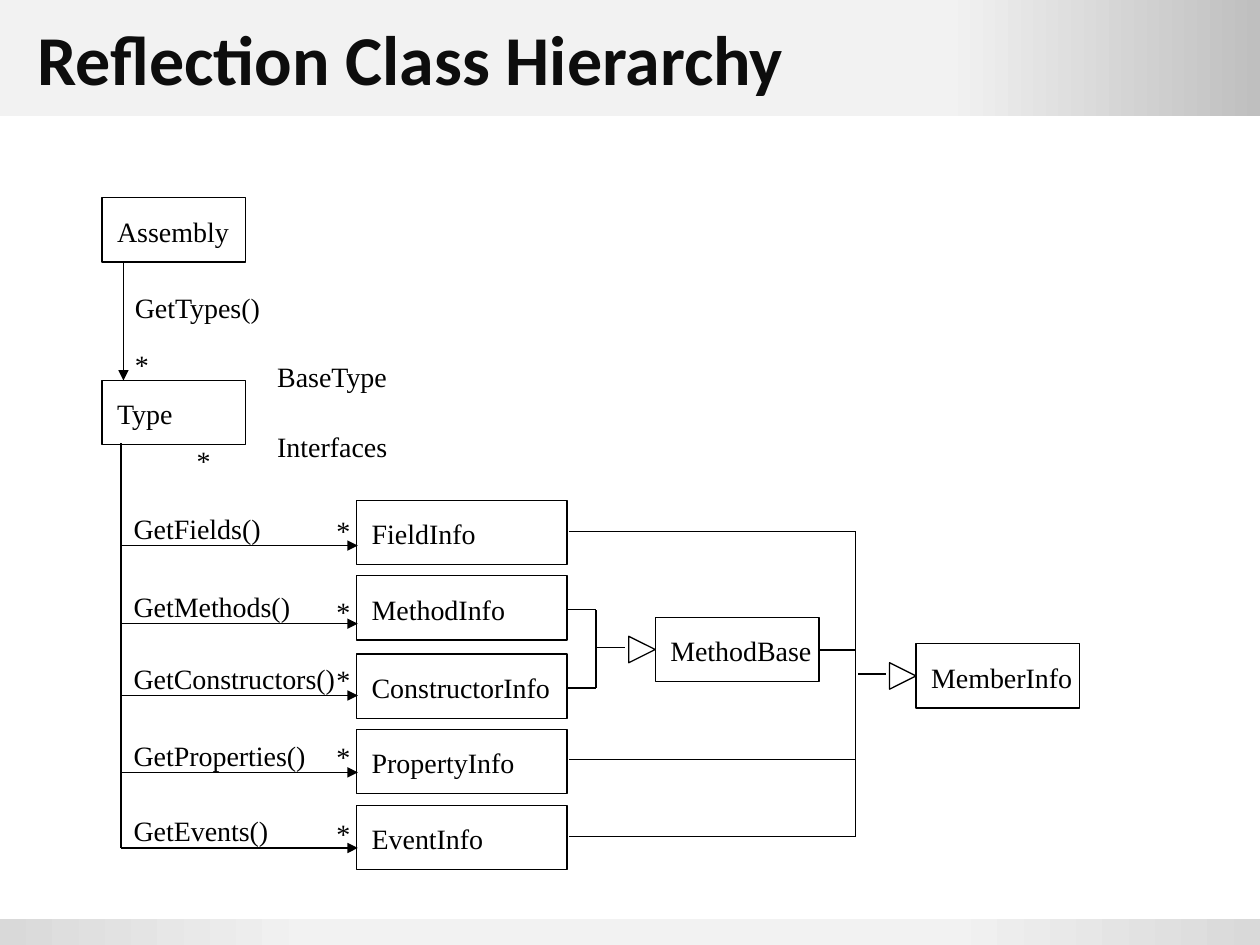
from lxml.etree import SubElement
from pptx import Presentation
from pptx.dml.color import RGBColor
from pptx.enum.shapes import MSO_CONNECTOR, MSO_SHAPE
from pptx.enum.text import MSO_ANCHOR, PP_ALIGN
from pptx.oxml.ns import qn
from pptx.util import Inches, Pt

COLOURS = {
    "ink": "000000",
    "title": "0D0D0D",
    "pale": "F2F2F2",
    "light": "D9D9D9",
    "grey": "BFBFBF",
}
BOX_HEIGHT = 0.51
LABEL_HEIGHT = 0.27


class ClassDiagram:
    """Holds the slide and the style shared by its elements."""

    label_font = {"name": "Times New Roman", "size": Pt(16), "bold": False}
    title_font = {"name": "Calibri", "size": Pt(40), "bold": True}
    line_width = Pt(0.75)

    def __init__(self, page):
        self.page = page

    def colour(self, name):
        return RGBColor.from_string(COLOURS[name])

    def set_text(self, shape, text, font, colour="ink", **frame_format):
        frame = shape.text_frame
        for name, value in frame_format.items():
            setattr(frame, name, value)
        paragraph = frame.paragraphs[0]
        paragraph.alignment = PP_ALIGN.LEFT
        span = paragraph.add_run()
        span.text = text
        for name, value in font.items():
            setattr(span.font, name, value)
        span.font.color.rgb = self.colour(colour)

    def shape(self, kind, left, top, width, height):
        shape = self.page.shapes.add_shape(
            kind, Inches(left), Inches(top), Inches(width), Inches(height))
        shape.shadow.inherit = False
        return shape

    def outline(self, kind, left, top, width, height):
        shape = self.shape(kind, left, top, width, height)
        shape.fill.background()
        shape.line.color.rgb = self.colour("ink")
        shape.line.width = self.line_width
        return shape

    def band(self, top, height, stops):
        """Draw a full-width band; stops are (percent, colour name) pairs."""
        band = self.shape(MSO_SHAPE.RECTANGLE, 0, top, 10, height)
        band.line.fill.background()
        band.fill.gradient()
        band.fill.gradient_angle = 0
        stop_list = next(band.element.iter(qn("a:gsLst")))
        for stop in list(stop_list):
            stop_list.remove(stop)
        for percent, name in stops:
            stop = SubElement(stop_list, qn("a:gs"), pos=str(percent * 1000))
            SubElement(stop, qn("a:srgbClr"), val=COLOURS[name])

    def title(self, text):
        box = self.page.shapes.add_textbox(
            Inches(0.2), Inches(0), Inches(9.61), Inches(0.92))
        self.set_text(box, text, self.title_font, "title", word_wrap=True,
                      vertical_anchor=MSO_ANCHOR.MIDDLE)

    def class_box(self, text, left, top, width):
        box = self.outline(MSO_SHAPE.RECTANGLE, left, top, width, BOX_HEIGHT)
        self.set_text(box, text, self.label_font, word_wrap=True,
                      vertical_anchor=MSO_ANCHOR.TOP,
                      margin_left=Inches(0.12), margin_top=Inches(0.13),
                      margin_right=0, margin_bottom=0)

    def label(self, text, left, top, width=0.11):
        box = self.page.shapes.add_textbox(
            Inches(left), Inches(top), Inches(width), Inches(LABEL_HEIGHT))
        self.set_text(box, text, self.label_font, word_wrap=False,
                      margin_left=0, margin_top=0,
                      margin_right=0, margin_bottom=0)

    def line(self, x1, y1, x2, y2, arrow=False):
        line = self.page.shapes.add_connector(
            MSO_CONNECTOR.STRAIGHT,
            Inches(x1), Inches(y1), Inches(x2), Inches(y2))
        line.line.color.rgb = self.colour("ink")
        line.line.width = self.line_width
        if arrow:
            stroke = next(line.element.iter(qn("a:ln")))
            SubElement(stroke, qn("a:tailEnd"), type="triangle")
        SubElement(line.element.spPr, qn("a:effectLst"))

    def base_class(self, text, left, top):
        """Draw a base class with its hollow inheritance arrow on the left."""
        self.line(left - 0.46, top + 0.24, left - 0.24, top + 0.24)
        triangle = self.outline(MSO_SHAPE.ISOSCELES_TRIANGLE,
                                left - 0.21, top + 0.15, 0.21, 0.21)
        triangle.rotation = 90
        self.class_box(text, left, top, 1.3)


def main():
    deck = Presentation()
    deck.slide_width, deck.slide_height = Inches(10), Inches(7.5)
    diagram = ClassDiagram(deck.slides.add_slide(deck.slide_layouts[6]))

    diagram.band(0, 0.92, [(75, "pale"), (100, "grey")])
    diagram.band(7.29, 0.21, [(0, "light"), (25, "pale"),
                              (75, "pale"), (100, "light")])
    diagram.title("Reflection Class Hierarchy")

    # Assembly and Type
    diagram.class_box("Assembly", 0.81, 1.57, 1.14)
    diagram.class_box("Type", 0.81, 3.02, 1.14)
    diagram.line(0.98, 2.08, 0.98, 3.02, arrow=True)
    diagram.label("GetTypes()", 1.07, 2.31, 1.01)
    diagram.label("*", 1.07, 2.76)
    diagram.label("BaseType", 2.2, 2.85, 0.89)
    diagram.label("Interfaces", 2.2, 3.41, 0.88)
    diagram.label("*", 1.56, 3.52)

    # Members of Type: class, box top, getter, getter width, arrow y, star top
    members = [
        ("FieldInfo", 3.97, "GetFields()", 1.02, 4.33, 4.08),
        ("MethodInfo", 4.57, "GetMethods()", 1.25, 4.95, 4.72),
        ("ConstructorInfo", 5.19, "GetConstructors()", 1.61, 5.52, 5.26),
        ("PropertyInfo", 5.79, "GetProperties()", 1.38, 6.13, 5.87),
        ("EventInfo", 6.39, "GetEvents()", 1.08, 6.73, 6.48),
    ]
    diagram.line(0.96, 3.52, 0.96, 6.73)
    for name, top, getter, width, arrow_y, star_top in members:
        diagram.class_box(name, 2.83, top, 1.67)
        diagram.label(getter, 1.06, arrow_y - LABEL_HEIGHT, width)
        diagram.line(0.96, arrow_y, 2.84, arrow_y, arrow=True)
        diagram.label("*", 2.67, star_top)

    # Methods and constructors join at MethodBase
    for y in (4.84, 5.46):
        diagram.line(4.5, y, 4.73, y)
    diagram.line(4.73, 5.46, 4.73, 4.84)
    diagram.base_class("MethodBase", 5.2, 4.9)

    # Everything joins at MemberInfo
    for left, y in ((4.52, 4.22), (6.5, 5.16), (4.52, 6.03), (4.52, 6.64)):
        diagram.line(left, y, 6.79, y)
    diagram.line(6.79, 6.64, 6.79, 4.22)
    diagram.base_class("MemberInfo", 7.27, 5.11)

    deck.save("out.pptx")


if __name__ == "__main__":
    main()
